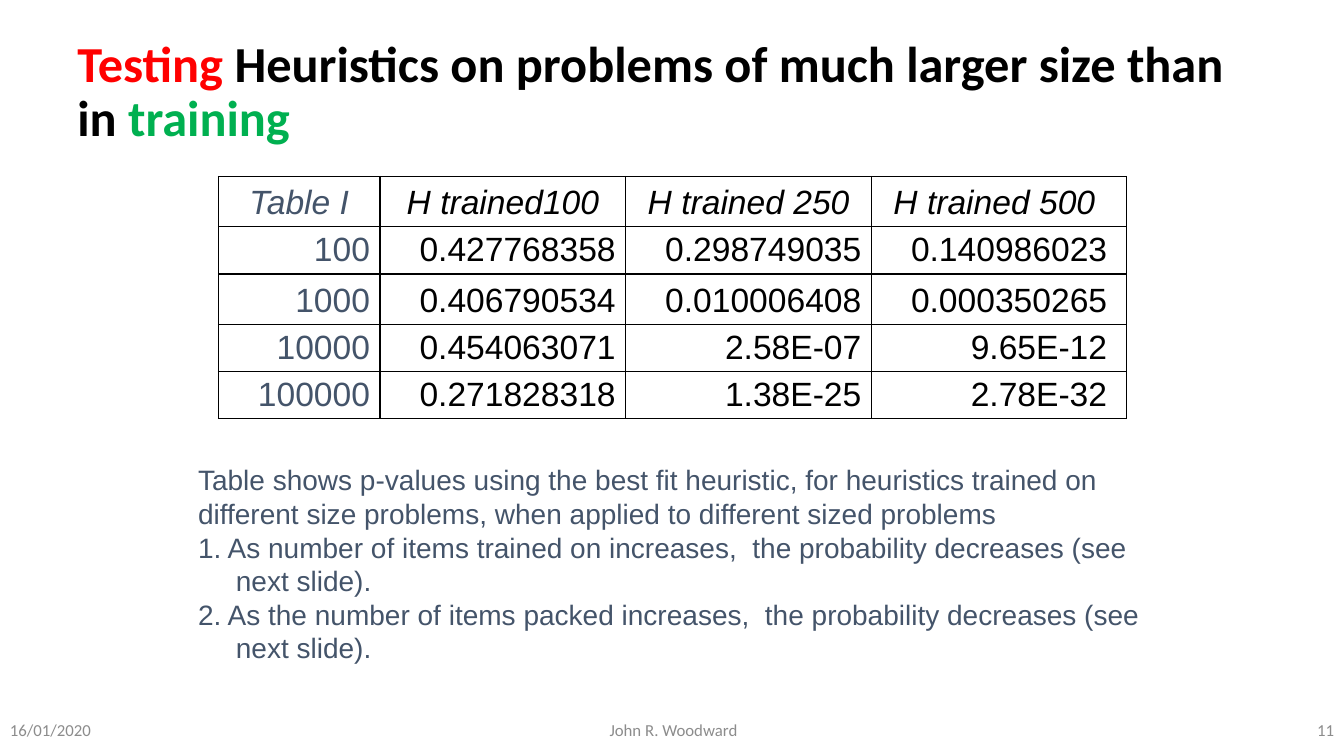
from lxml import etree
from pptx import Presentation
from pptx import util as u
from pptx.dml.color import RGBColor
from pptx.enum import text
from pptx.oxml.ns import qn

TITLE = [
    ("Testing", "FF0000"),
    (" Heuristics on problems of much larger size than in ", "000000"),
    ("training", "00B050"),
]
P_VALUES = [
    ["Table I", "H trained100", "H trained 250", "H trained 500 "],
    ["100", "0.427768358", "0.298749035", "0.140986023 "],
    ["1000", "0.406790534", "0.010006408", "0.000350265 "],
    ["10000", "0.454063071", "2.58E-07", "9.65E-12 "],
    ["100000", "0.271828318", "1.38E-25", "2.78E-32 "],
]
FINDINGS = [
    "Table shows p-values using the best fit heuristic, for heuristics trained on",
    "different size problems, when applied to different sized problems",
    "1. As number of items trained on increases,  the probability decreases (see next slide).",
    "2. As the number of items packed increases,  the probability decreases (see next slide).",
]
LEFT, CENTER, RIGHT = text.PP_ALIGN.LEFT, text.PP_ALIGN.CENTER, text.PP_ALIGN.RIGHT
FOOTERS = [
    ("16/01/2020", 0, 299, LEFT),
    ("John R. Woodward", 439, 405, CENTER),
    ("11", 981, 299, RIGHT),
]
COLUMN_WIDTHS = [154, 234, 234, 243]
ROW_HEIGHTS = [48, 45, 48, 45, 45]
HANGING = 36
SLATE, BLACK, GRAY = "44546A", "000000", "8C8C8C"


def px(length):
    return u.Emu(length * 9525)


def color(value):
    return RGBColor.from_string(value)


def apply(target, values):
    for name, value in values.items():
        setattr(target, name, value)


def place(shape, left, top, width, height):
    apply(shape, {"left": px(left), "top": px(top), "width": px(width), "height": px(height)})


def add_run(paragraph, words, hex_color, **font):
    run = paragraph.add_run()
    run.text = words
    apply(run.font, font)
    run.font.color.rgb = color(hex_color)


def hang(paragraph):
    properties = paragraph._p.get_or_add_pPr()
    properties.set("marL", str(px(HANGING)))
    properties.set("indent", str(px(-HANGING)))
    return properties


def add_borders(cell):
    properties = cell._tc.get_or_add_tcPr()
    for position, side in enumerate(("lnL", "lnR", "lnT", "lnB")):
        line = etree.Element(qn(f"a:{side}"), w=str(u.Pt(1)))
        fill = etree.SubElement(line, qn("a:solidFill"))
        etree.SubElement(fill, qn("a:srgbClr"), val=BLACK)
        properties.insert(position, line)


def add_title(slide):
    title = slide.shapes.title
    place(title, 64, 29, 1152, 120)
    apply(title.text_frame, {
        "word_wrap": True,
        "auto_size": text.MSO_AUTO_SIZE.NONE,
        "vertical_anchor": text.MSO_ANCHOR.MIDDLE,
    })
    paragraph = title.text_frame.paragraphs[0]
    apply(paragraph, {"alignment": LEFT, "line_spacing": 0.9})
    for words, hex_color in TITLE:
        add_run(paragraph, words, hex_color, name="Calibri", size=u.Pt(36), bold=True)


def add_p_values(slide):
    frame = slide.shapes.add_table(
        len(P_VALUES), len(COLUMN_WIDTHS),
        px(208), px(168), px(sum(COLUMN_WIDTHS)), px(sum(ROW_HEIGHTS)),
    )
    table = frame.table
    apply(table, {"first_row": False, "horz_banding": False})
    for column, width in zip(table.columns, COLUMN_WIDTHS):
        column.width = px(width)
    for row, height in zip(table.rows, ROW_HEIGHTS):
        row.height = px(height)
    for row_index, values in enumerate(P_VALUES):
        header = row_index == 0
        for column_index, value in enumerate(values):
            cell = table.cell(row_index, column_index)
            apply(cell, {
                "margin_top": px(3),
                "margin_bottom": px(5),
                "vertical_anchor": text.MSO_ANCHOR.BOTTOM,
            })
            cell.fill.background()
            add_borders(cell)
            paragraph = cell.text_frame.paragraphs[0]
            paragraph.alignment = CENTER if header else RIGHT
            hang(paragraph)
            add_run(paragraph, value, BLACK if column_index else SLATE,
                    name="Arial", size=u.Pt(24), italic=header)


def add_findings(slide):
    body = slide.placeholders[1]
    place(body, 179, 436, 935, 204)
    frame = body.text_frame
    apply(frame, {
        "word_wrap": True,
        "auto_size": text.MSO_AUTO_SIZE.NONE,
        "vertical_anchor": text.MSO_ANCHOR.TOP,
    })
    for index, finding in enumerate(FINDINGS):
        paragraph = frame.add_paragraph() if index else frame.paragraphs[0]
        apply(paragraph, {"alignment": LEFT, "space_before": u.Pt(0), "space_after": u.Pt(0)})
        etree.SubElement(hang(paragraph), qn("a:buNone"))
        add_run(paragraph, finding, SLATE, name="Arial", size=u.Pt(20))


def add_footers(slide):
    for words, left, width, alignment in FOOTERS:
        box = slide.shapes.add_textbox(px(left), px(670), px(width), px(50))
        apply(box.text_frame, {"word_wrap": True, "vertical_anchor": text.MSO_ANCHOR.MIDDLE})
        paragraph = box.text_frame.paragraphs[0]
        paragraph.alignment = alignment
        add_run(paragraph, words, GRAY, name="Calibri", size=u.Pt(12))


def main():
    presentation = Presentation()
    apply(presentation, {"slide_width": px(1280), "slide_height": px(720)})
    slide = presentation.slides.add_slide(presentation.slide_layouts[1])
    add_title(slide)
    add_p_values(slide)
    add_findings(slide)
    add_footers(slide)
    presentation.save("out.pptx")


if __name__ == "__main__":
    main()
